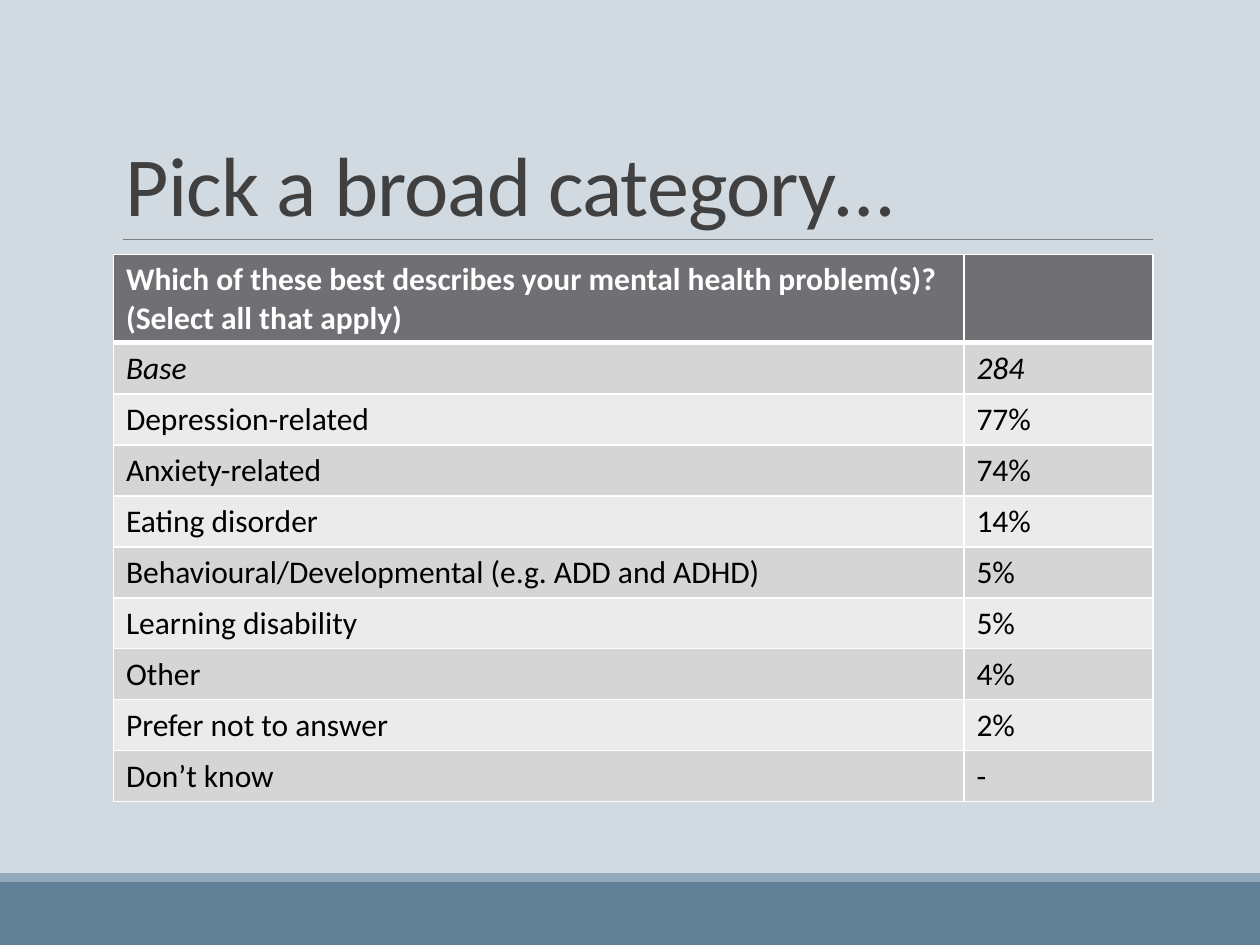
from lxml.etree import SubElement
from pptx import Presentation
from pptx.dml.color import RGBColor as RGB
from pptx.enum.shapes import MSO_CONNECTOR as CONNECTOR, MSO_SHAPE as SHAPE
from pptx.enum.text import MSO_ANCHOR as ANCHOR
from pptx.oxml.ns import qn
from pptx.util import Inches, Pt

COLORS = {
    "background": "D1D9E1", "footer": "618197", "footer_edge": "92A9B9",
    "rule": "808080", "title": "404040", "header": "6F6F74",
    "odd_row": "D5D5D6", "even_row": "EBEBEB", "white": "FFFFFF", "black": "000000",
}
ROWS = [
    ("Which of these best describes your mental health problem(s)? (Select all that apply)", ""),
    ("Base", "284"),
    ("Depression-related", "77%"),
    ("Anxiety-related", "74%"),
    ("Eating disorder", "14%"),
    ("Behavioural/Developmental (e.g. ADD and ADHD)", "5%"),
    ("Learning disability", "5%"),
    ("Other", "4%"),
    ("Prefer not to answer", "2%"),
    ("Don’t know", "-"),
]
LEFT, WIDTH = 0.9, 8.25
LABEL_WIDTH, VALUE_WIDTH = 6.75, 1.5
TABLE_TOP, HEADER_HEIGHT, ROW_HEIGHT = 2.02, 0.7, 0.405
RULE_Y = 1.9


def write_text(frame, text, size=18, color="black", bold=False, italic=False,
               line_spacing=None, tracking=None):
    paragraph = frame.paragraphs[0]
    if line_spacing:
        paragraph.line_spacing = line_spacing
    run = paragraph.add_run()
    run.text = text
    font = run.font
    font.name, font.size, font.bold, font.italic = "Calibri", Pt(size), bold, italic
    font.color.rgb = RGB.from_string(COLORS[color])
    if tracking:
        run._r.get_or_add_rPr().set("spc", str(int(tracking * 100)))


def set_borders(cell, bottom_width, width=1):
    properties = cell._tc.get_or_add_tcPr()
    for side, points in (("L", width), ("R", width), ("T", width), ("B", bottom_width)):
        line = SubElement(properties, qn(f"a:ln{side}"), w=str(Pt(points)))
        fill = SubElement(line, qn("a:solidFill"))
        SubElement(fill, qn("a:srgbClr"), val=COLORS["white"])


presentation = Presentation()
presentation.slide_width, presentation.slide_height = Inches(10), Inches(7.5)
slide = presentation.slides.add_slide(presentation.slide_layouts[6])
slide.background.fill.solid()
slide.background.fill.fore_color.rgb = RGB.from_string(COLORS["background"])

# Footer bands
for top, height, color in ((7, 0.5, "footer"), (6.93, 0.07, "footer_edge")):
    band = slide.shapes.add_shape(SHAPE.RECTANGLE, 0, Inches(top),
                                  presentation.slide_width, Inches(height))
    band.shadow.inherit = False
    band.fill.solid()
    band.fill.fore_color.rgb = RGB.from_string(COLORS[color])
    band.line.fill.background()

# Rule under the title
rule = slide.shapes.add_connector(CONNECTOR.STRAIGHT, Inches(0.98), Inches(RULE_Y),
                                  Inches(LEFT + WIDTH), Inches(RULE_Y))
rule.line.color.rgb = RGB.from_string(COLORS["rule"])
rule.line.width = Pt(0.5)
SubElement(rule._element.spPr, qn("a:effectLst"))

# Title
title = slide.shapes.add_textbox(Inches(LEFT), Inches(0.31), Inches(WIDTH), Inches(1.59))
title.text_frame.word_wrap = True
title.text_frame.vertical_anchor = ANCHOR.BOTTOM
write_text(title.text_frame, "Pick a broad category…", size=48, color="title",
           line_spacing=0.85, tracking=-0.5)

# Table of answers
table_height = HEADER_HEIGHT + ROW_HEIGHT * (len(ROWS) - 1)
table = slide.shapes.add_table(len(ROWS), 2, Inches(LEFT), Inches(TABLE_TOP),
                               Inches(WIDTH), Inches(table_height)).table
table.columns[0].width, table.columns[1].width = Inches(LABEL_WIDTH), Inches(VALUE_WIDTH)
for row_index, texts in enumerate(ROWS):
    is_header = row_index == 0
    table.rows[row_index].height = Inches(HEADER_HEIGHT if is_header else ROW_HEIGHT)
    row_color = "header" if is_header else ("even_row", "odd_row")[row_index % 2]
    for column_index, text in enumerate(texts):
        cell = table.cell(row_index, column_index)
        set_borders(cell, bottom_width=3 if is_header else 1)
        cell.fill.solid()
        cell.fill.fore_color.rgb = RGB.from_string(COLORS[row_color])
        if text:
            write_text(cell.text_frame, text, color="white" if is_header else "black",
                       bold=is_header, italic=texts[0] == "Base")

presentation.save("out.pptx")
